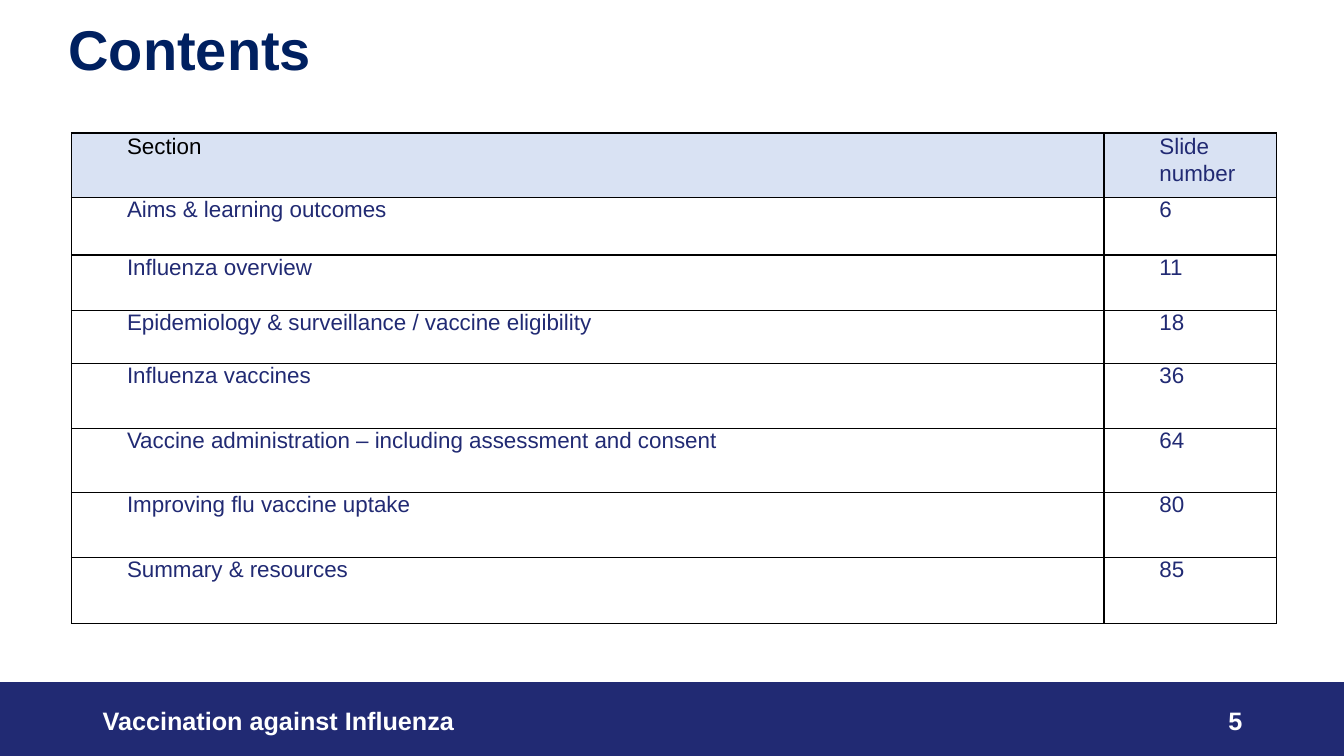
from typing import NamedTuple

from lxml.etree import SubElement
from pptx import Presentation
from pptx.dml.color import RGBColor
from pptx.enum.shapes import MSO_SHAPE
from pptx.enum.text import MSO_ANCHOR, MSO_AUTO_SIZE, PP_ALIGN
from pptx.oxml.ns import qn
from pptx.slide import Slide
from pptx.table import _Cell
from pptx.text.text import TextFrame
from pptx.util import Inches, Pt

COLORS = {
    "navy": "212A73",
    "title": "002060",
    "header": "D9E2F3",
    "black": "000000",
    "white": "FFFFFF",
}


class Section(NamedTuple):
    name: str
    slide_number: str
    row_height: float


class FooterText(NamedTuple):
    text: str
    left: float
    width: float
    align: PP_ALIGN


SECTIONS = [
    Section("Section", "Slide number", 0.64),
    Section("Aims & learning outcomes", "6", 0.57),
    Section("Influenza overview", "11", 0.55),
    Section("Epidemiology & surveillance / vaccine eligibility", "18", 0.53),
    Section("Influenza vaccines", "36", 0.64),
    Section("Vaccine administration – including assessment and consent", "64", 0.64),
    Section("Improving flu vaccine uptake", "80", 0.64),
    Section("Summary & resources", "85", 0.66),
]
COLUMN_WIDTHS = [10.24, 1.71]
FOOTER_TEXTS = [
    FooterText("5", 9.42, 3, PP_ALIGN.RIGHT),
    FooterText("Vaccination against Influenza", 0.92, 8, PP_ALIGN.LEFT),
]


def rgb(name: str) -> RGBColor:
    return RGBColor.from_string(COLORS[name])


def write_text(frame: TextFrame, text: str, *, size: float, color: str,
               bold: bool = False, align: PP_ALIGN = PP_ALIGN.LEFT,
               line_spacing: float = 1.0, indent: float = 0) -> None:
    frame.word_wrap = True
    paragraph = frame.paragraphs[0]
    paragraph.alignment = align
    paragraph.line_spacing = line_spacing
    if indent:
        paragraph._p.get_or_add_pPr().set("marL", str(Inches(indent)))
    run = paragraph.add_run()
    run.text = text
    run.font.name = "Arial"
    run.font.size = Pt(size)
    run.font.bold = bold
    run.font.color.rgb = rgb(color)


def add_borders(cell: _Cell) -> None:
    properties = cell._tc.get_or_add_tcPr()
    for side in ("a:lnL", "a:lnR", "a:lnT", "a:lnB"):
        line = SubElement(properties, qn(side), w=str(Pt(1)))
        fill = SubElement(line, qn("a:solidFill"))
        SubElement(fill, qn("a:srgbClr"), val=COLORS["black"])


def add_title(slide: Slide) -> None:
    title = slide.shapes.title
    title.left, title.top = Inches(0.58), Inches(0.17)
    title.width, title.height = Inches(11.69), Inches(1.45)
    title.text_frame.vertical_anchor = MSO_ANCHOR.TOP
    title.text_frame.auto_size = MSO_AUTO_SIZE.NONE
    write_text(title.text_frame, "Contents", size=40, color="title",
               bold=True, line_spacing=0.9)


def add_contents_table(slide: Slide) -> None:
    table = slide.shapes.add_table(
        len(SECTIONS), len(COLUMN_WIDTHS), Inches(0.71), Inches(1.32),
        Inches(sum(COLUMN_WIDTHS)),
        Inches(sum(section.row_height for section in SECTIONS))).table
    table.first_row = table.horz_banding = False
    for column, width in zip(table.columns, COLUMN_WIDTHS):
        column.width = Inches(width)
    for row_index, section in enumerate(SECTIONS):
        is_header = row_index == 0
        table.rows[row_index].height = Inches(section.row_height)
        for column_index, text in enumerate((section.name, section.slide_number)):
            cell = table.cell(row_index, column_index)
            cell.margin_left = cell.margin_right = Inches(0.05)
            cell.margin_top = cell.margin_bottom = 0
            add_borders(cell)
            if is_header:
                cell.fill.solid()
                cell.fill.fore_color.rgb = rgb("header")
            else:
                cell.fill.background()
            write_text(cell.text_frame, text, size=16, indent=0.5,
                       color="black" if is_header and column_index == 0 else "navy",
                       line_spacing=1.07 if is_header else 1.0)


def add_footer(slide: Slide) -> None:
    band = slide.shapes.add_shape(MSO_SHAPE.RECTANGLE, 0, Inches(6.77),
                                  Inches(13.33), Inches(0.73))
    band.shadow.inherit = False
    band.fill.solid()
    band.fill.fore_color.rgb = rgb("navy")
    band.line.color.rgb = rgb("navy")
    band.line.width = Pt(1)
    for item in FOOTER_TEXTS:
        box = slide.shapes.add_textbox(Inches(item.left), Inches(6.95),
                                       Inches(item.width), Inches(0.4))
        write_text(box.text_frame, item.text, size=18, color="white",
                   bold=True, align=item.align)


def main() -> None:
    presentation = Presentation()
    presentation.slide_width = Inches(13.33)
    presentation.slide_height = Inches(7.5)
    slide = presentation.slides.add_slide(presentation.slide_layouts[5])
    add_title(slide)
    add_contents_table(slide)
    add_footer(slide)
    presentation.save("out.pptx")


if __name__ == "__main__":
    main()
